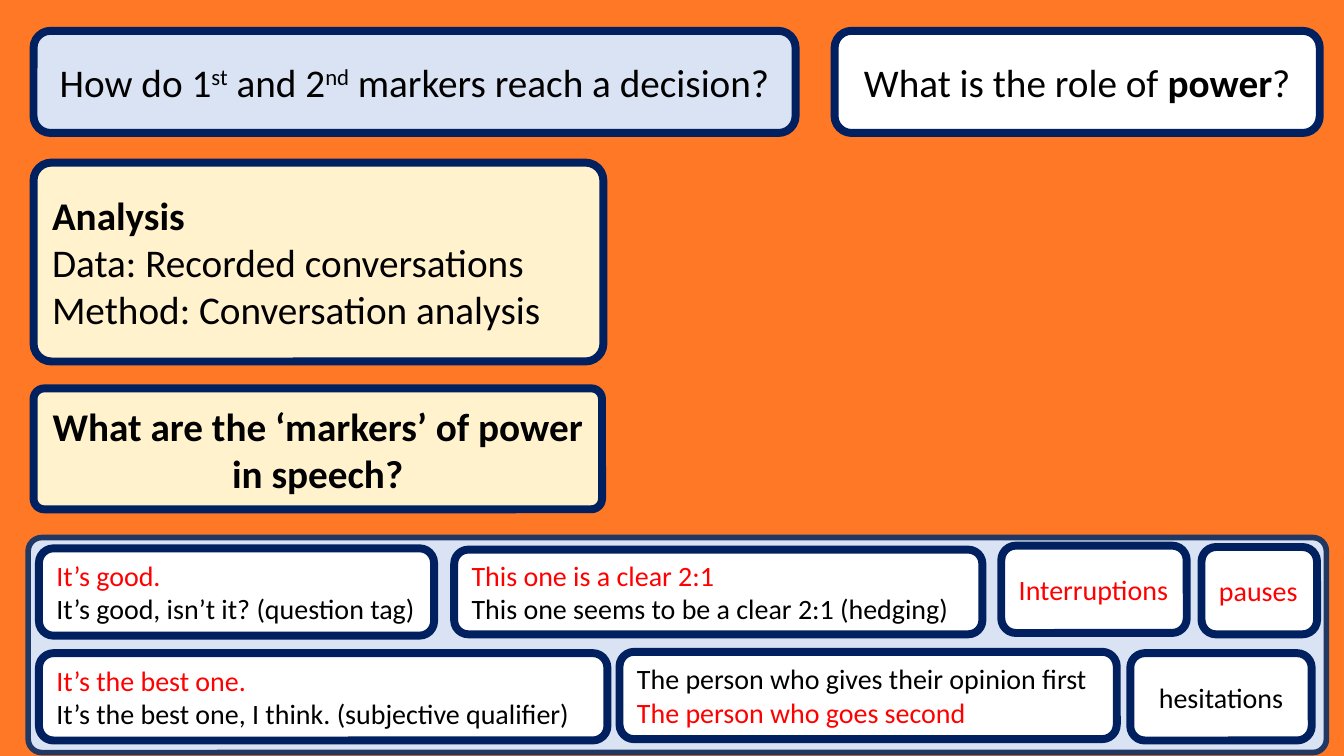
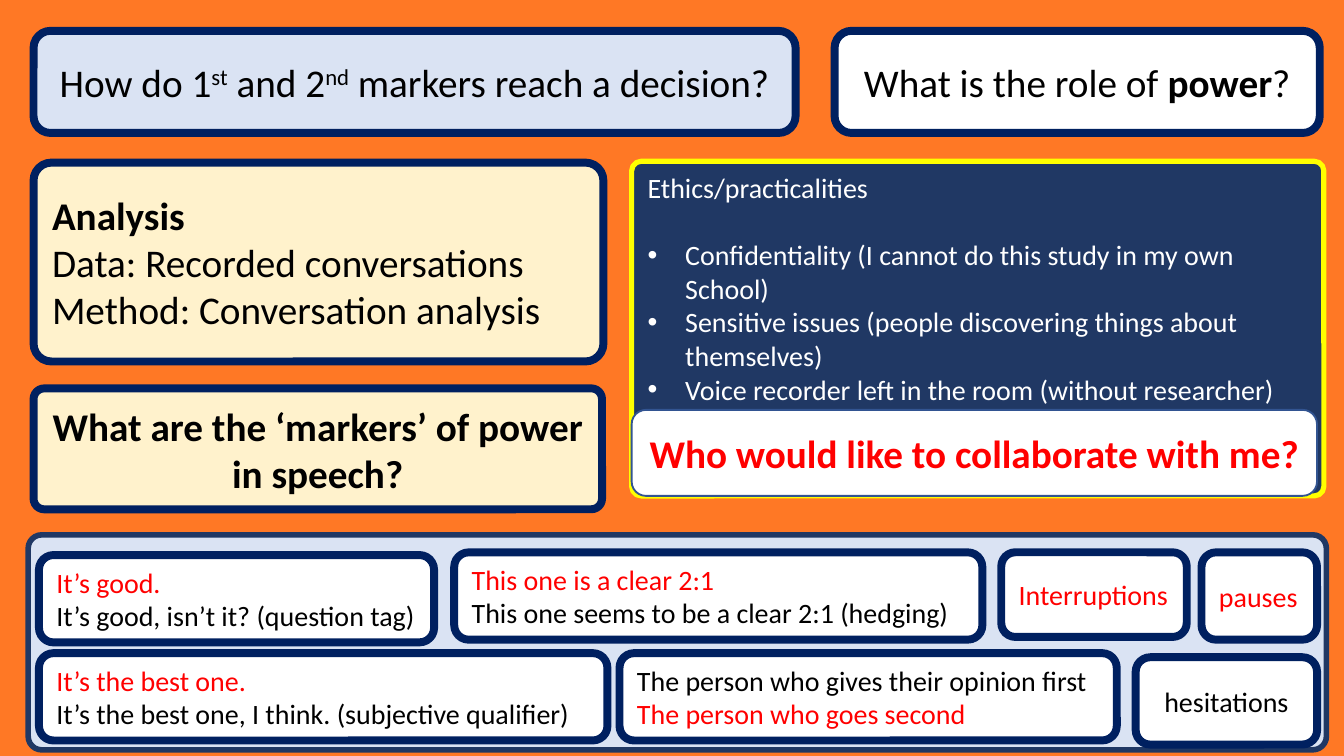
"""Build two slides on power in conversations between markers."""
from lxml.etree import SubElement
from pptx import Presentation
from pptx.dml.color import RGBColor
from pptx.enum.shapes import MSO_SHAPE
from pptx.enum.text import MSO_ANCHOR, PP_ALIGN
from pptx.oxml.ns import qn
from pptx.util import Inches, Pt

HUES = {
    "back": "FF7825", "pale": "DAE3F3", "cream": "FFF2CC", "white": "FFFFFF",
    "navy": "002060", "slate": "203864", "blue": "325491", "yellow": "FFFF00",
    "red": "FF0000", "black": "000000",
}

CARDS = [
    (0.29, 2.94, [("It’s good.", "red"),
                  ("It’s good, isn’t it? (question tag)", "black")]),
    (0.29, 4.23, [("It’s the best one.", "red"),
                  ("It’s the best one, I think. (subjective qualifier)", "black")]),
    (4.61, 3.7, [("The person who gives their opinion first", "black"),
                 ("The person who goes second", "red")]),
    (3.38, 3.93, [("This one is a clear 2:1", "red"),
                  ("This one seems to be a clear 2:1 (hedging)", "black")]),
    (7.45, 1.38, [("Interruptions", "red")]),
    (8.94, 0.86, [("pauses", "red")]),
]

ETHICS = [
    "Confidentiality (I cannot do this study in my own School)",
    "Sensitive issues (people discovering things about themselves)",
    "Voice recorder left in the room (without researcher)",
]


def hue(name):
    return RGBColor.from_string(HUES[name])


class Deck:
    """Hold the style and the current slide."""

    def __init__(self):
        self.prs = Presentation()
        self.prs.slide_width = Inches(10)
        self.prs.slide_height = Inches(10) * 9 // 16
        self.font = "Calibri"
        self.large, self.small = 21, 15

    def page(self):
        self.slide = self.prs.slides.add_slide(self.prs.slide_layouts[6])
        fill = self.slide.background.fill
        fill.solid()
        fill.fore_color.rgb = hue("back")

    def box(self, at, fill, line="navy", width=4.25, round=None):
        shape = self.slide.shapes.add_shape(
            MSO_SHAPE.ROUNDED_RECTANGLE, *[Inches(n) for n in at])
        shape.shadow.inherit = False
        shape.fill.solid()
        shape.fill.fore_color.rgb = hue(fill)
        shape.line.color.rgb = hue(line)
        shape.line.width = Pt(width)
        if round is not None:
            shape.adjustments[0] = round
        shape.text_frame.word_wrap = True
        shape.text_frame.vertical_anchor = MSO_ANCHOR.MIDDLE
        return shape

    def style(self, run, size, color="black", bold=False, sup=False):
        run.font.name = self.font
        run.font.size = Pt(size)
        run.font.color.rgb = hue(color)
        run.font.bold = bold
        if sup:
            run._r.get_or_add_rPr().set("baseline", "30000")

    def title(self, at, fill, runs, **look):
        shape = self.box(at, fill, **look)
        para = shape.text_frame.paragraphs[0]
        para.alignment = PP_ALIGN.CENTER
        for text, form in runs:
            run = para.add_run()
            run.text = text
            self.style(run, self.large, **form)

    def lines(self, shape, rows, size, align=PP_ALIGN.LEFT):
        frame = shape.text_frame
        frame.text = "\n".join(text for text, _ in rows)
        for para, (_, form) in zip(frame.paragraphs, rows):
            para.alignment = align
            self.style(para.runs[0], size, **form)

    def card(self, at, rows, align=PP_ALIGN.LEFT):
        shape = self.box(at, "white")
        if align == PP_ALIGN.LEFT:
            shape.text_frame.margin_right = Inches(0.08)
        self.lines(shape, [(text, {"color": color}) for text, color in rows],
                   self.small, align)

    def list(self, at, head, items):
        shape = self.box(at, "slate", "yellow", 2.75, 0.028)
        frame = shape.text_frame
        frame.vertical_anchor = MSO_ANCHOR.TOP
        self.lines(shape, [(text, {"color": "white"}) for text in [head, *items]],
                   self.small)
        first, *rest = frame.paragraphs
        first.space_after = Pt(18)
        for para in rest:
            props = para._p.get_or_add_pPr()
            props.set("marL", str(Inches(0.28)))
            props.set("indent", str(Inches(-0.28)))
            SubElement(props, qn("a:buFont")).set("typeface", "Arial")
            SubElement(props, qn("a:buChar")).set("char", "•")

    def base(self, top, tops, low):
        self.page()
        self.box((0.21, top, 9.66, 1.6), "pale", "slate", 3, 0.063)
        self.title((0.25, 0.23, 5.67, 0.76), "pale", [
            ("How do 1", {}), ("st", {"sup": True}), (" and 2", {}),
            ("nd", {"sup": True}), (" markers reach a decision?", {})])
        self.title((6.21, 0.23, 3.61, 0.76), "white", [
            ("What is the role of ", {}), ("power", {"bold": True}), ("?", {})])
        study = self.box((0.25, 1.21, 4.24, 1.48), "cream", round=0.09)
        self.lines(study, [("Analysis", {"bold": True}),
                           ("Data: Recorded conversations", {}),
                           ("Method: Conversation analysis", {})], self.large)
        self.title((0.25, 2.89, 4.23, 0.9), "cream", [
            ("What are the ‘markers’ of power in speech?", {"bold": True})],
            round=0.089)
        for spot, ((left, width, rows), y) in enumerate(zip(CARDS, tops)):
            self.card((left, y, width, 0.63 if spot == low else 0.65), rows)

    def last(self, left, top):
        self.card((left, top, 1.35, 0.65), [("hesitations", "black")],
                  PP_ALIGN.CENTER)


def main():
    deck = Deck()
    deck.base(4, [4.08, 4.86, 4.85, 4.09, 4.06, 4.07], low=3)
    deck.last(8.41, 4.86)
    deck.base(3.98, [4.13, 4.86, 4.86, 4.11, 4.11, 4.11], low=4)
    deck.last(8.45, 4.89)
    deck.list((4.7, 1.2, 5.15, 2.49), "Ethics/practicalities", ETHICS)
    deck.title((4.7, 3.05, 5.1, 0.64), "white", [
        ("Who would like to collaborate with me?", {"color": "red", "bold": True})],
        line="blue", width=1)
    deck.prs.save("out.pptx")


if __name__ == "__main__":
    main()
